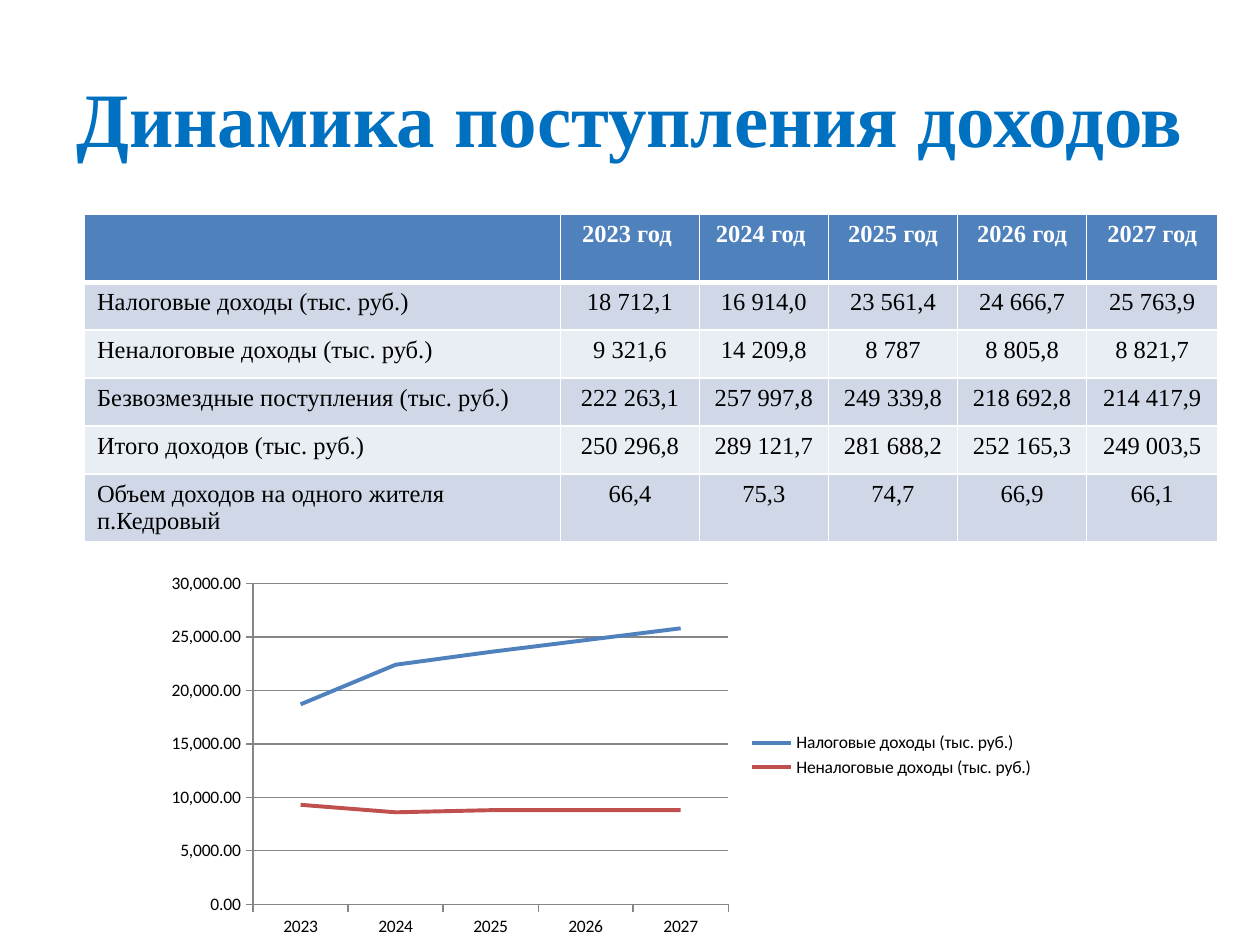
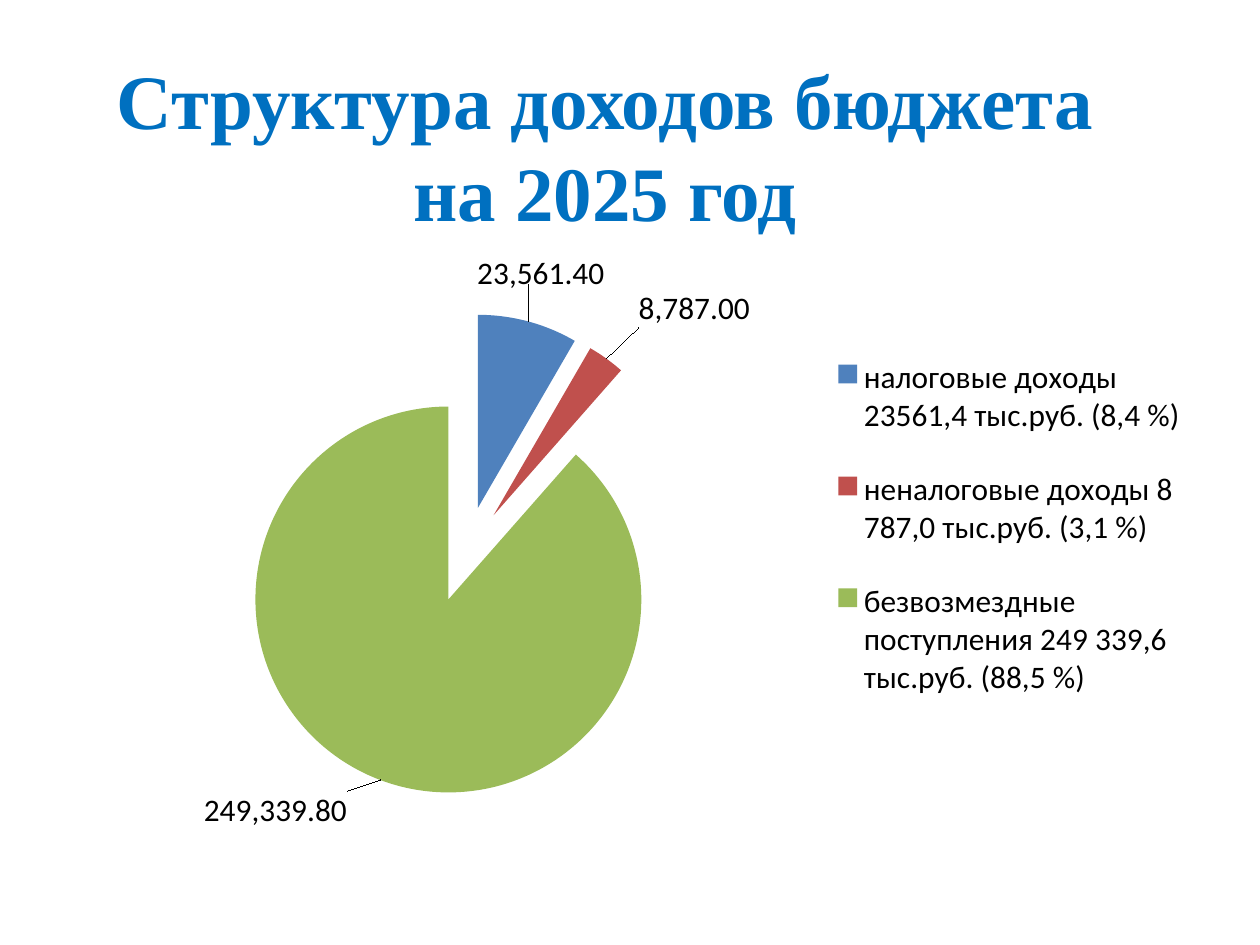
"""Builds two slides on the income of a local budget."""
from lxml import etree
from pptx import Presentation
from pptx.chart.data import CategoryChartData
from pptx.dml.color import RGBColor
from pptx.enum.chart import XL_CHART_TYPE, XL_LABEL_POSITION, XL_LEGEND_POSITION, XL_TICK_MARK
from pptx.enum.text import MSO_ANCHOR, MSO_AUTO_SIZE, PP_ALIGN
from pptx.oxml.ns import qn
from pptx.util import Inches, Pt

LINE, PIE = XL_CHART_TYPE.LINE, XL_CHART_TYPE.PIE
OUTSIDE_END = XL_LABEL_POSITION.OUTSIDE_END
LEGEND_RIGHT = XL_LEGEND_POSITION.RIGHT
TICK_OUTSIDE = XL_TICK_MARK.OUTSIDE
TOP, MIDDLE = MSO_ANCHOR.TOP, MSO_ANCHOR.MIDDLE
LEFT, CENTER = PP_ALIGN.LEFT, PP_ALIGN.CENTER
NO_FIT = MSO_AUTO_SIZE.NONE

COLORS = {
    "title": "0070C0", "text": "000000", "white": "FFFFFF", "grid": "868686",
    "header": "4F81BD", "band_dark": "D0D8E8", "band_light": "E9EDF4",
    "tax": "4F81BD", "non_tax": "C0504D", "grants": "9BBB59",
}
TITLE_FONT, CHART_FONT = "Times New Roman", "Calibri"
NUMBER_FORMAT = "#,##0.00"
TITLE_ONLY_LAYOUT = 5

YEARS = ["2023", "2024", "2025", "2026", "2027"]
TAX_NAME, NON_TAX_NAME = "Налоговые доходы (тыс. руб.)", "Неналоговые доходы (тыс. руб.)"
INCOME_ROWS = [
    ["", "2023 год ", "2024 год ", "2025 год", "2026 год", "2027 год"],
    [TAX_NAME, "18 712,1", "16 914,0", "23 561,4", "24 666,7", "25 763,9"],
    [NON_TAX_NAME, "9 321,6", "14 209,8", "8 787", "8 805,8", "8 821,7"],
    ["Безвозмездные поступления (тыс. руб.)",
     "222 263,1", "257 997,8", "249 339,8", "218 692,8", "214 417,9"],
    ["Итого доходов (тыс. руб.)",
     "250 296,8", "289 121,7", "281 688,2", "252 165,3", "249 003,5"],
    ["Объем доходов на одного жителя п.Кедровый", "66,4", "75,3", "74,7", "66,9", "66,1"],
]
INCOME_SERIES = {
    TAX_NAME: [18700, 22400, 23600, 24700, 25800],
    NON_TAX_NAME: [9300, 8600, 8800, 8800, 8800],
}
BUDGET_SHARES = {
    "налоговые доходы 23561,4 тыс.руб. (8,4 %)": 23561.4,
    "неналоговые доходы 8 787,0 тыс.руб. (3,1 %)": 8787,
    "безвозмездные поступления 249 339,6 тыс.руб. (88,5 %)": 249339.8,
}
LABEL_SHIFTS = [(-4.7, -5), (2.5, -4.2), (-2.7, 0.7)]
PIE_AREA = {"x": 6.2, "y": 9.9, "w": 57.2, "h": 81.3}
PIE_LEGEND_AREA = {"x": 67.7, "y": 11.5, "w": 31, "h": 69}


def color_of(name):
    """Return the palette colour with this name."""
    return RGBColor.from_string(COLORS[name])


def write(paragraph, text, size=14, color="text", bold=False, align=LEFT):
    """Add formatted text to a paragraph."""
    paragraph.alignment = align
    run = paragraph.add_run()
    run.text = text
    run.font.name, run.font.size, run.font.bold = TITLE_FONT, Pt(size), bold
    run.font.color.rgb = color_of(color)


def set_borders(cell, top, bottom):
    """Give a cell white borders, with top and bottom widths in points."""
    properties = cell._tc.get_or_add_tcPr()
    for side, width in (("L", 1), ("R", 1), ("T", top), ("B", bottom)):
        line = etree.SubElement(properties, qn(f"a:ln{side}"), w=str(Pt(width)))
        fill = etree.SubElement(line, qn("a:solidFill"))
        etree.SubElement(fill, qn("a:srgbClr"), val=COLORS["white"])


def manual_layout(modes, **percents):
    """Return a chart layout element with modes and percentages of the chart."""
    layout = etree.Element(qn("c:layout"))
    manual = etree.SubElement(layout, qn("c:manualLayout"))
    for tag, mode in modes.items():
        etree.SubElement(manual, qn(f"c:{tag}"), val=mode)
    for tag, percent in percents.items():
        etree.SubElement(manual, qn(f"c:{tag}"), val=f"{percent / 100:.3f}")
    return layout


class Deck:
    """Holds the presentation, its style and the current slide."""

    def __init__(self):
        """Start an empty presentation."""
        self.presentation = Presentation()
        self.presentation.slide_width = Inches(10)
        self.presentation.slide_height = Inches(7.5)
        self.slide = None

    def across(self, percent):
        """Turn a percentage of the slide width into a length."""
        return round(self.presentation.slide_width * percent / 100)

    def down(self, percent):
        """Turn a percentage of the slide height into a length."""
        return round(self.presentation.slide_height * percent / 100)

    def box(self, left, top, width, height):
        """Turn percentages of the slide into a position and size."""
        return self.across(left), self.down(top), self.across(width), self.down(height)

    def add_slide(self, title, area, anchor):
        """Start a slide with a title."""
        layout = self.presentation.slide_layouts[TITLE_ONLY_LAYOUT]
        self.slide = self.presentation.slides.add_slide(layout)
        shape = self.slide.shapes.title
        shape.left, shape.top, shape.width, shape.height = self.box(*area)
        frame = shape.text_frame
        frame.word_wrap, frame.auto_size, frame.vertical_anchor = True, NO_FIT, anchor
        write(frame.paragraphs[0], title, size=44, color="title", bold=True, align=CENTER)

    def add_table(self, rows, left, top, widths, heights):
        """Add a banded table with a header row."""
        area = self.box(left, top, sum(widths), sum(heights))
        table = self.slide.shapes.add_table(len(rows), len(widths), *area).table
        for column, width in zip(table.columns, widths):
            column.width = self.across(width)
        for row_index, (row, height) in enumerate(zip(rows, heights)):
            table.rows[row_index].height = self.down(height)
            header = row_index == 0
            fill = "header" if header else ("band_light", "band_dark")[row_index % 2]
            for column_index, text in enumerate(row):
                cell = table.cell(row_index, column_index)
                set_borders(cell, 3 if row_index == 1 else 1, 3 if header else 1)
                cell.fill.solid()
                cell.fill.fore_color.rgb = color_of(fill)
                if text:
                    write(cell.text_frame.paragraphs[0], text, bold=header,
                          color="white" if header else "text",
                          align=CENTER if column_index else LEFT)

    def add_chart(self, kind, area, categories, series, size):
        """Add a chart with a legend on the right."""
        data = CategoryChartData(number_format=NUMBER_FORMAT)
        data.categories = categories
        for name, values in series.items():
            data.add_series(name, values)
        chart = self.slide.shapes.add_chart(kind, *self.box(*area), data).chart
        chart.has_title, chart.has_legend = False, True
        chart.legend.position = LEGEND_RIGHT
        chart.legend.include_in_layout = False
        chart.font.name, chart.font.size = CHART_FONT, Pt(size)
        chart.font.color.rgb = color_of("text")
        return chart

    def add_line_chart(self, area, categories, series, colors):
        """Add a line chart with horizontal grid lines."""
        chart = self.add_chart(LINE, area, categories, series, 10)
        chart.plots[0].vary_by_categories = False
        for line, color in zip(chart.plots[0].series, colors):
            line.smooth = False
            line.format.line.width = Pt(2.25)
            line.format.line.color.rgb = color_of(color)
        chart.value_axis.has_major_gridlines = True
        chart.value_axis.tick_labels.number_format = NUMBER_FORMAT
        chart.value_axis.tick_labels.number_format_is_linked = False
        for axis in (chart.category_axis, chart.value_axis):
            axis.major_tick_mark = TICK_OUTSIDE
        for part in (chart.category_axis, chart.value_axis, chart.value_axis.major_gridlines):
            part.format.line.width = Pt(0.75)
            part.format.line.color.rgb = color_of("grid")

    def add_pie_chart(self, area, shares, colors, shifts):
        """Add an exploded pie chart with shifted value labels."""
        chart = self.add_chart(PIE, area, list(shares), {"Series 1": list(shares.values())}, 17.9)
        plot = chart.plots[0]
        plot.vary_by_categories = True
        pie = plot.series[0]
        for index, color in enumerate(colors):
            point = pie.points[index]
            point.format.fill.solid()
            point.format.fill.fore_color.rgb = color_of(color)
            point.data_label.position = OUTSIDE_END
        labels = pie.data_labels
        labels.show_value = True
        labels.number_format, labels.number_format_is_linked = NUMBER_FORMAT, False
        for label, (x, y) in zip(pie._element.iter(qn("c:dLbl")), shifts):
            label.insert(1, manual_layout({}, x=x, y=y))
        explosion = etree.Element(qn("c:explosion"), val="25")
        pie._element.find(qn("c:tx")).addnext(explosion)
        plot_area = chart._chartSpace.chart.plotArea
        legend = chart.legend._element
        for element in (plot_area, legend):
            for layout in element.findall(qn("c:layout")):
                element.remove(layout)
        edges = {"xMode": "edge", "yMode": "edge"}
        plot_area.insert(0, manual_layout({"layoutTarget": "inner"} | edges, **PIE_AREA))
        legend.find(qn("c:legendPos")).addnext(manual_layout(edges, **PIE_LEGEND_AREA))


def main():
    """Build both slides and save them."""
    deck = Deck()
    deck.add_slide("Динамика поступления доходов", (5, 4, 90, 16.67), MIDDLE)
    deck.add_table(INCOME_ROWS, 6.7, 22.67, widths=[37.8, 11] + [10.25] * 3 + [10.4],
                   heights=[7.2] + [5.08] * 4 + [7.2])
    deck.add_line_chart((12.2, 59.9, 70.9, 40), YEARS, INCOME_SERIES, ["tax", "non_tax"])

    deck.add_slide("Структура доходов бюджета на 2025 год", (4.33, 4.86, 87.4, 21.07), TOP)
    deck.add_pie_chart((5.9, 26.93, 89.2, 62.8), BUDGET_SHARES,
                       ["tax", "non_tax", "grants"], LABEL_SHIFTS)
    deck.presentation.save("out.pptx")


if __name__ == "__main__":
    main()
